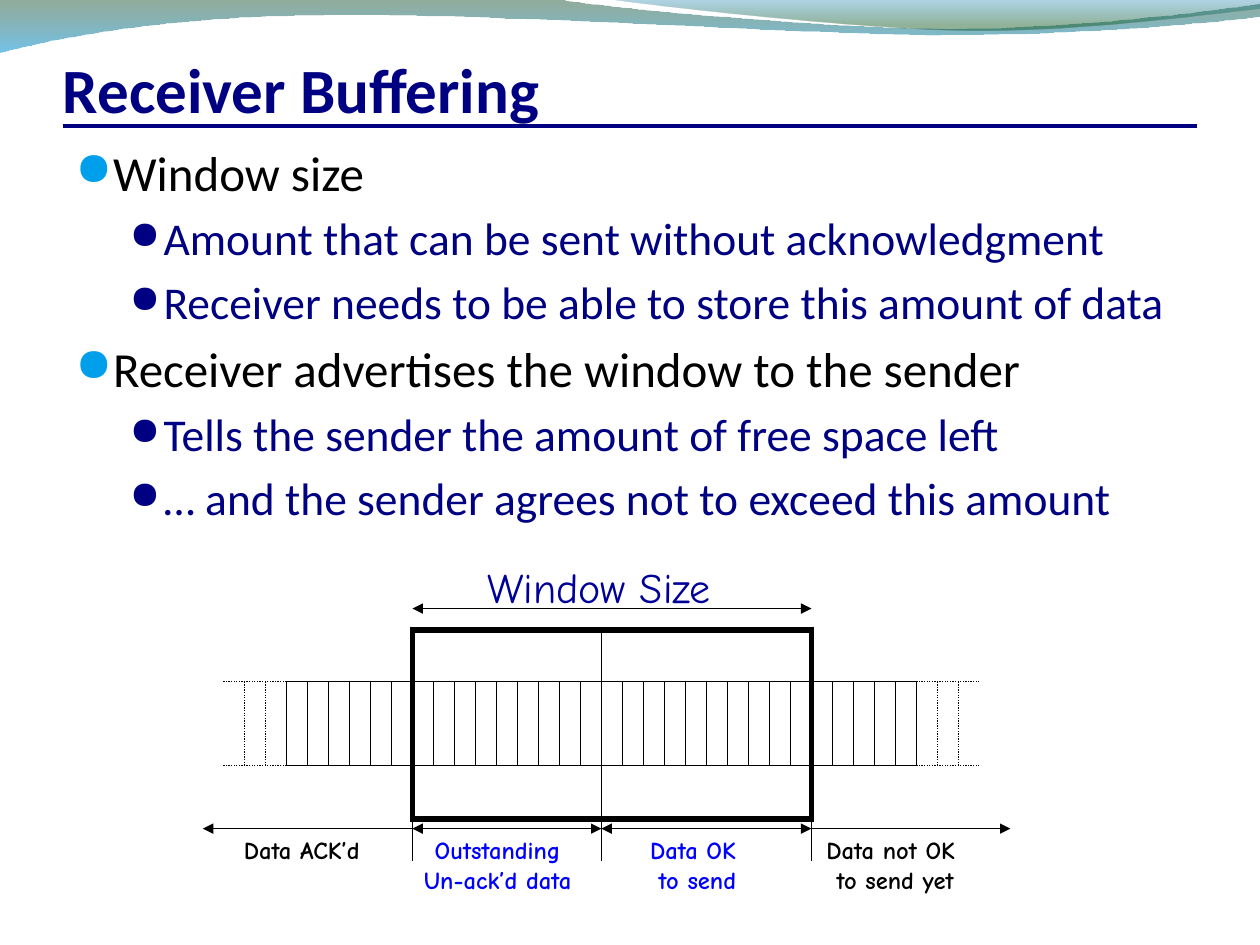
from lxml import etree
from pptx import Presentation
from pptx.dml.color import RGBColor
from pptx.enum.dml import MSO_LINE
from pptx.enum.shapes import MSO_CONNECTOR, MSO_SHAPE
from pptx.enum.text import MSO_ANCHOR, MSO_AUTO_SIZE, PP_ALIGN
from pptx.oxml.ns import qn
from pptx.util import Inches, Pt

STRAIGHT = MSO_CONNECTOR.STRAIGHT
DOTTED = MSO_LINE.ROUND_DOT
RECTANGLE = MSO_SHAPE.RECTANGLE
BOTTOM = MSO_ANCHOR.BOTTOM
FIT_SHAPE = MSO_AUTO_SIZE.SHAPE_TO_FIT_TEXT
CENTER = PP_ALIGN.CENTER

COLORS = {
    "navy": "000082", "black": "000000", "white": "FFFFFF", "bullet": "009FEC",
    "window": "000099", "sendable": "0000FF",
    "dark_green": "0F461E", "sky": "0090D6", "blue": "0076AF", "green": "0D5821",
}


def add_line(x1, y1, x2, y2, dash=None, ends=(), color="black", width=0.75):
    """Draw a line; ends names the arrowheads: headEnd at the start, tailEnd at the finish."""
    line = slide.shapes.add_connector(STRAIGHT, Inches(x1), Inches(y1), Inches(x2), Inches(y2))
    line.line.color.rgb = RGBColor.from_string(COLORS[color])
    line.line.width = Pt(width)
    if dash:
        line.line.dash_style = dash
    for end in ends:
        etree.SubElement(line.line._get_or_add_ln(), qn(f"a:{end}"), type="triangle")
    etree.SubElement(line._element.spPr, qn("a:effectLst"))


def add_text(frame, lines, size, font, color, bold=False, align=None):
    """Write each line as a paragraph, after any text already in the frame."""
    for text in lines:
        paragraph = frame.paragraphs[-1]
        if paragraph.runs:
            paragraph = frame.add_paragraph()
        paragraph.alignment = align
        run = paragraph.add_run()
        run.text = text
        run.font.size = Pt(size)
        run.font.name = font
        run.font.bold = bold
        run.font.color.rgb = RGBColor.from_string(COLORS[color])
    return paragraph


presentation = Presentation()
presentation.slide_width = Inches(10)
presentation.slide_height = Inches(7.5)
slide = presentation.slides.add_slide(presentation.slide_layouts[6])

# Waves along the top edge: a two-item step is a line, a six-item step a curve
waves = [
    ([(0, -0.01), (4.4, -0.01), (4.76, 0.06, 6.64, 0.23, 7.58, 0.23),
      (8.53, 0.23, 9.58, 0.09, 10, 0.03), (10.01, 0.13),
      (9.83, 0.16, 8.7, 0.28, 7.46, 0.28), (6.22, 0.27, 3.82, 0.1, 2.57, 0.12),
      (1.29, 0.13, 0.46, 0.3, -0.01, 0.42), (0, -0.01)],
     [(0, "dark_green", 45), (1, "sky", 55)]),
    ([(4.79, -0.01), (5.09, 0.04, 6.82, 0.23, 7.69, 0.24),
      (8.56, 0.25, 9.61, 0.11, 10, 0.07), (10, -0.01), (4.79, -0.01)],
     [(0, "blue", 30), (0.8, "green", 45)]),
]
for outline, stops in waves:
    ends = [(Inches(step[-2]), Inches(step[-1])) for step in outline]
    builder = slide.shapes.build_freeform(*ends[0])
    builder.add_line_segments(ends[1:-1], close=True)
    wave = builder.convert_to_shape()
    # Bend the segments that are curves
    segments = list(wave._element.spPr.iter(qn("a:lnTo")))
    for segment, step in zip(segments, outline[1:]):
        if len(step) == 6:
            curve = etree.Element(qn("a:cubicBezTo"))
            for x, y in zip(step[::2], step[1::2]):
                etree.SubElement(curve, qn("a:pt"), x=str(Inches(x) - wave.left),
                                 y=str(Inches(y) - wave.top))
            segment.getparent().replace(segment, curve)
    wave.shadow.inherit = False
    wave.line.fill.background()
    wave.fill.gradient()
    wave.fill.gradient_angle = 270
    for stop, (position, color, _) in zip(wave.fill.gradient_stops, stops):
        stop.position = position
        stop.color.rgb = RGBColor.from_string(COLORS[color])
    for color_element, (_, _, opacity) in zip(wave._element.spPr.iter(qn("a:srgbClr")), stops):
        etree.SubElement(color_element, qn("a:alpha"), val=str(opacity * 1000))

# Title and its rule
add_line(0.5, 1, 9.5, 1, color="navy", width=2.25)
title = slide.shapes.add_textbox(Inches(0.5), Inches(0.33), Inches(9), Inches(0.67)).text_frame
title.word_wrap = True
title.vertical_anchor = BOTTOM
title.margin_left = title.margin_right = title.margin_bottom = 0
add_text(title, ["Receiver Buffering"], 36, "Calibri", "navy", bold=True)

# Bulleted text
body = slide.shapes.add_textbox(Inches(0.5), Inches(1.08), Inches(9), Inches(5.83)).text_frame
body.word_wrap = True
# size, text colour, bullet colour, bullet size, indent, hanging
LEVELS = [
    (28, "black", "bullet", 95, 0.3, 0.3),
    (26, "navy", "navy", 85, 0.7, 0.27),
]
bullets = [
    (0, "Window size"),
    (1, "Amount that can be sent without acknowledgment"),
    (1, "Receiver needs to be able to store this amount of data"),
    (0, "Receiver advertises the window to the sender"),
    (1, "Tells the sender the amount of free space left"),
    (1, "… and the sender agrees not to exceed this amount"),
]
for level, text in bullets:
    size, color, bullet_color, bullet_size, indent, hanging = LEVELS[level]
    paragraph = add_text(body, [text], size, "Calibri", color)
    paragraph.level = level
    properties = paragraph._p.get_or_add_pPr()
    properties.set("marL", str(Inches(indent)))
    properties.set("indent", str(-Inches(hanging)))
    space = etree.SubElement(properties, qn("a:spcBef"))
    etree.SubElement(space, qn("a:spcPct"), val="20000")
    tint = etree.SubElement(properties, qn("a:buClr"))
    etree.SubElement(tint, qn("a:srgbClr"), val=COLORS[bullet_color])
    etree.SubElement(properties, qn("a:buSzPct"), val=str(bullet_size * 1000))
    etree.SubElement(properties, qn("a:buFont"), typeface="OpenSymbol")
    etree.SubElement(properties, qn("a:buChar"), char="●")

# White band behind the bottom labels
band = slide.shapes.add_shape(RECTANGLE, 0, Inches(6.83), Inches(10), Inches(0.67))
band.shadow.inherit = False
band.fill.solid()
band.fill.fore_color.rgb = RGBColor.from_string(COLORS["white"])
band.line.fill.background()

# Buffer of 30 cells, with dotted cells trailing off on both sides
CELLS = 30
CELL = 1 / 6
LEFT = 1.94 + 2 * CELL
RIGHT = LEFT + CELLS * CELL
TOP = 5.41
BASE = TOP + 4 * CELL
for y in (TOP, BASE):
    add_line(LEFT, y, RIGHT, y)
    add_line(RIGHT + 0.5, y, RIGHT, y, DOTTED)
    add_line(LEFT, y, LEFT - 0.5, y, DOTTED)
for i in range(-2, CELLS + 3):
    x = LEFT + i * CELL
    add_line(x, TOP, x, BASE, None if 0 <= i <= CELLS else DOTTED)

# Window over cells 6 to 25, split at cell 15
start, split, end = (LEFT + i * CELL for i in (6, 15, 25))
window = slide.shapes.add_shape(RECTANGLE, Inches(start), Inches(5), Inches(end - start), Inches(1.5))
window.shadow.inherit = False
window.fill.background()
window.line.color.rgb = RGBColor.from_string(COLORS["black"])
window.line.width = Pt(3)
etree.SubElement(window.line._get_or_add_ln(), qn("a:miter"), lim="800000")
add_line(split, 5, split, 6.5)

# Span arrows and the ticks between them
BOTH = ("headEnd", "tailEnd")
ARROW_Y = TOP + 7 * CELL
add_line(start, 4.83, end, 4.83, ends=BOTH)
add_line(start, ARROW_Y, 1.61, ARROW_Y, ends=("tailEnd",))
add_line(end, ARROW_Y, 8.02, ARROW_Y, ends=("tailEnd",))
add_line(start, ARROW_Y, split, ARROW_Y, ends=BOTH)
add_line(split, ARROW_Y, end, ARROW_Y, ends=BOTH)
for x in (start, split, end):
    add_line(x, 6.5, x, 6.83)

# Labels: left, top, width, height, lines, size, colour, bold, alignment
labels = [
    (3.77, 4.41, 2.2, 0.5, ["Window Size"], 24, "window", False, None),
    (3.18, 6.58, 1.54, 0.57, ["Outstanding", "Un-ack’d data"], 14, "sendable", True, CENTER),
    (4.99, 6.58, 1.09, 0.57, ["Data OK ", "to send"], 14, "sendable", True, CENTER),
    (6.37, 6.58, 1.47, 0.57, ["Data not OK ", "to send yet"], 14, "black", True, CENTER),
    (1.75, 6.58, 1.36, 0.57, ["Data ACK’d "], 14, "black", True, CENTER),
]
for left, top, width, height, lines, size, color, bold, align in labels:
    label = slide.shapes.add_textbox(Inches(left), Inches(top), Inches(width), Inches(height))
    label.text_frame.word_wrap = False
    label.text_frame.auto_size = FIT_SHAPE
    add_text(label.text_frame, lines, size, "Comic Neue", color, bold, align)

presentation.save("out.pptx")
